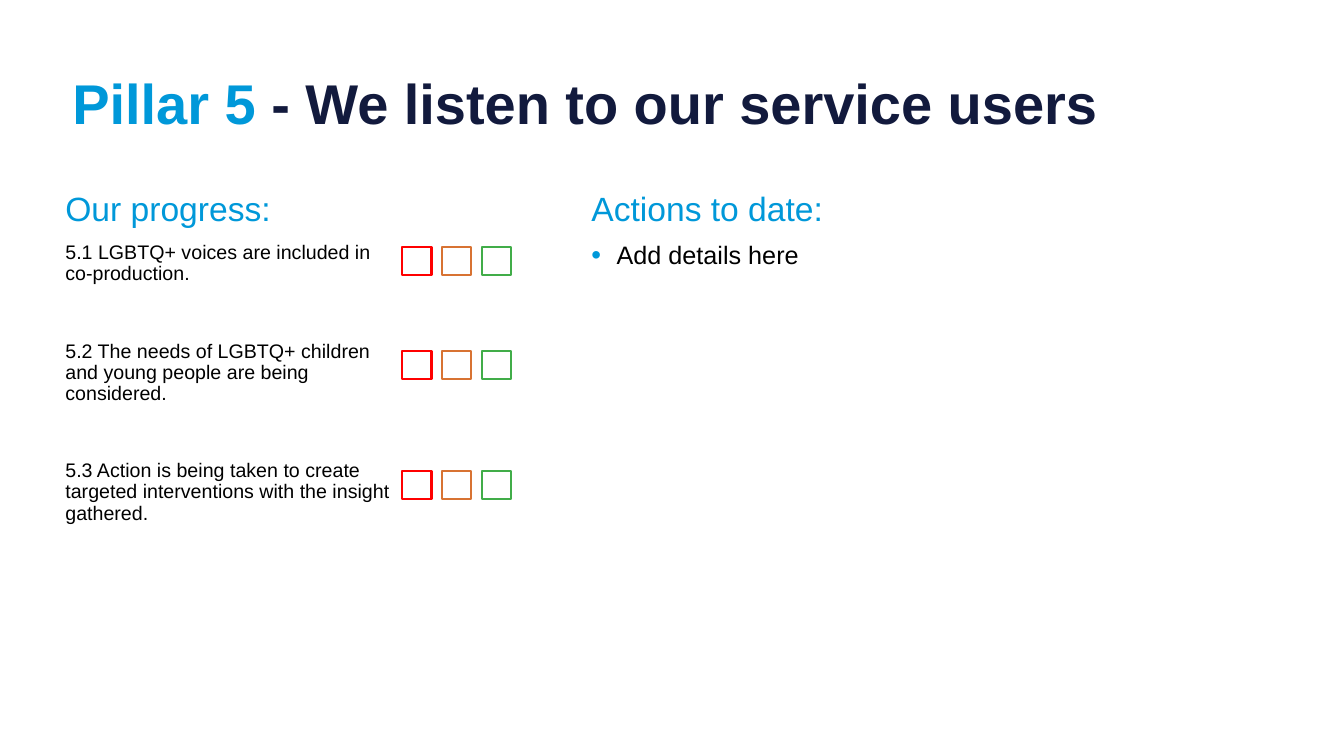
from collections import namedtuple
from dataclasses import dataclass

from lxml.etree import SubElement
from pptx import Presentation
from pptx.dml.color import RGBColor as Color
from pptx.enum.shapes import MSO_SHAPE as Shape
from pptx.enum.text import MSO_ANCHOR as Anchor
from pptx.oxml.ns import qn
from pptx.util import Pt

Box = namedtuple("Box", "left top width height")
Item = namedtuple("Item", "lines rating_top")


@dataclass(frozen=True)
class Theme:
    font: str = "Arial"
    blue: str = "0098D9"
    navy: str = "121A3D"
    black: str = "000000"
    ratings: tuple = ("FF0000", "D87333", "41AD49")
    title_size: int = 40
    heading_size: int = 24
    action_size: int = 18
    item_size: int = 14


THEME = Theme()
TITLE = Box(44.6, 23.8, 869.8, 104.4)
PROGRESS = Box(39.6, 134, 337, 356.4)
ACTIONS = Box(415.4, 134, 475.2, 356.4)

ITEMS = [
    Item(["5.1 LGBTQ+ voices are included in", "co-production."], 42.4),
    Item(["5.2 The needs of LGBTQ+ children", "and young people are being", "considered."], 116.6),
    Item(["5.3 Action is being taken to create", "targeted interventions with the insight", "gathered."], 202.2),
]


def add_frame(slide, box, anchor=Anchor.TOP):
    frame = slide.shapes.add_textbox(*map(Pt, box)).text_frame
    frame.word_wrap = True
    frame.vertical_anchor = anchor
    return frame


def add_text(paragraph, *lines, size, color, bold=False, before=0):
    paragraph.line_spacing = 0.9
    paragraph.space_before = Pt(before)
    for index, line in enumerate(lines):
        if index:
            paragraph.add_line_break()
        run = paragraph.add_run()
        run.text = line
        run.font.name = THEME.font
        run.font.size = Pt(size)
        run.font.bold = bold
        run.font.color.rgb = Color.from_string(color)


def add_bullet(paragraph, color, indent=18):
    properties = paragraph._p.get_or_add_pPr()
    properties.set("marL", str(Pt(indent)))
    properties.set("indent", str(-Pt(indent)))
    bullet_color = SubElement(properties, qn("a:buClr"))
    SubElement(bullet_color, qn("a:srgbClr"), val=color)
    SubElement(properties, qn("a:buSzPct"), val="110000")
    SubElement(properties, qn("a:buFont"), typeface=THEME.font)
    SubElement(properties, qn("a:buChar"), char="•")


def add_title(slide, box):
    paragraph = add_frame(slide, box, Anchor.MIDDLE).paragraphs[0]
    add_text(paragraph, "Pillar 5 ", size=THEME.title_size, color=THEME.blue, bold=True)
    add_text(paragraph, "- We listen to our service users",
             size=THEME.title_size, color=THEME.navy, bold=True)


def add_panel(slide, box, heading):
    frame = add_frame(slide, box)
    add_text(frame.paragraphs[0], heading,
             size=THEME.heading_size, color=THEME.blue, before=10)
    return frame


def add_rating(slide, box, step=28.4):
    for index, color in enumerate(THEME.ratings):
        square = slide.shapes.add_shape(
            Shape.RECTANGLE, Pt(box.left + index * step), Pt(box.top), Pt(box.width), Pt(box.height))
        square.shadow.inherit = False
        square.fill.background()
        square.line.color.rgb = Color.from_string(color)
        square.line.width = Pt(1.5)


def add_progress(slide, box):
    frame = add_panel(slide, box, "Our progress:")
    for index, item in enumerate(ITEMS):
        add_text(frame.add_paragraph(), *item.lines, size=THEME.item_size,
                 color=THEME.black, before=40 if index else 10)
        add_rating(slide, Box(box.left + 247.6, box.top + item.rating_top, 21, 20.2))


def add_actions(slide, box):
    paragraph = add_panel(slide, box, "Actions to date:").add_paragraph()
    add_text(paragraph, "Add details here",
             size=THEME.action_size, color=THEME.black, before=10)
    add_bullet(paragraph, THEME.blue)


def main():
    presentation = Presentation()
    presentation.slide_width = Pt(960)
    presentation.slide_height = Pt(540)
    slide = presentation.slides.add_slide(presentation.slide_layouts[6])
    add_actions(slide, ACTIONS)
    add_progress(slide, PROGRESS)
    add_title(slide, TITLE)
    presentation.save("out.pptx")


if __name__ == "__main__":
    main()
